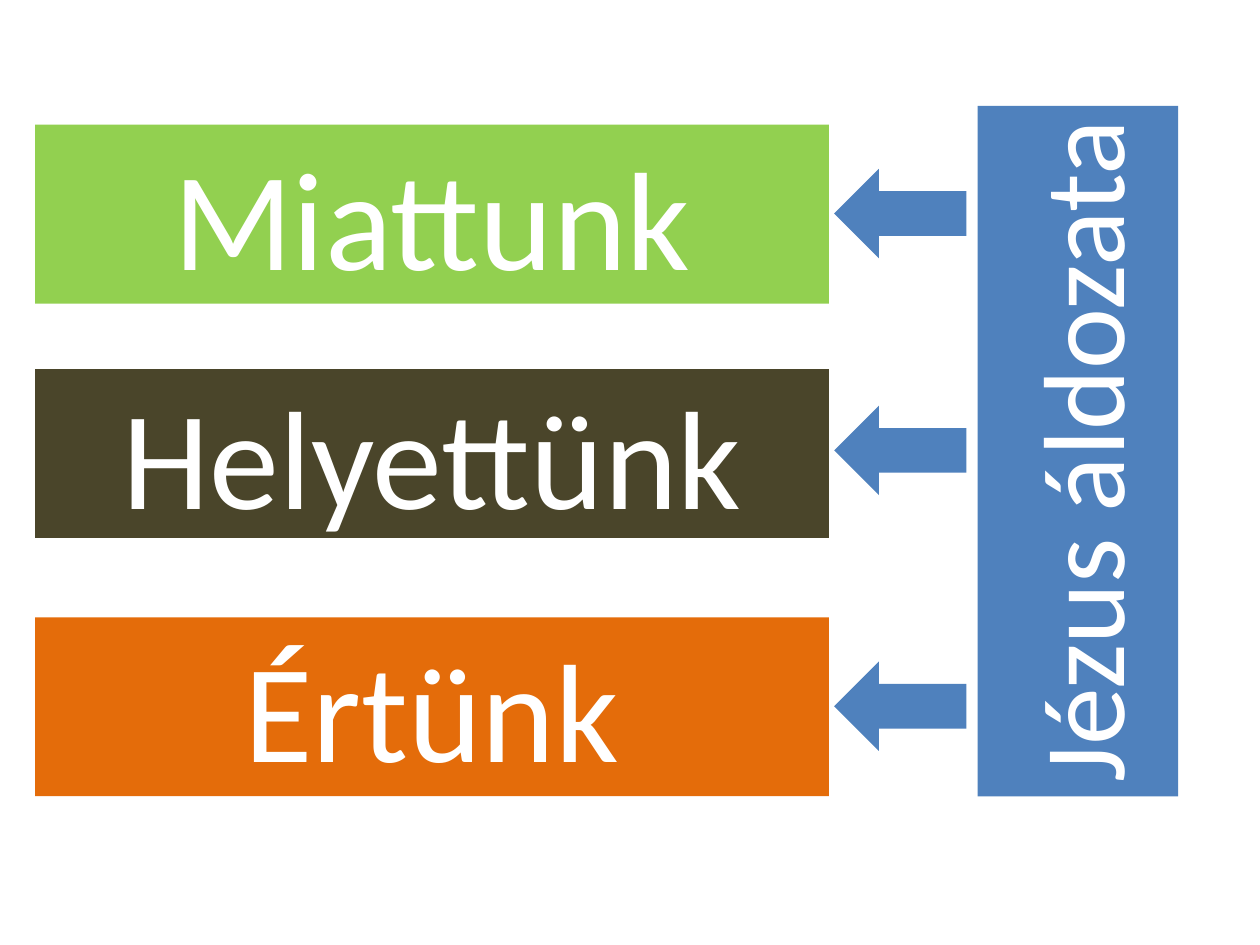
from dataclasses import dataclass

from pptx import Presentation
from pptx import util as u
from pptx.dml.color import RGBColor
from pptx.enum import shapes, text

COLORS = {
    "green": "92D050",
    "brown": "4A452A",
    "orange": "E46C0A",
    "blue": "4F81BD",
    "white": "FFFFFF",
}
FONT = "Calibri"
SLIDE_WIDTH, SLIDE_HEIGHT = u.Inches(10), u.Inches(7.5)


@dataclass
class Area:
    """Place and size in percent of the slide's width and height."""
    left: float
    top: float
    width: float
    height: float


@dataclass
class Reason:
    label: str
    color: str
    top: float
    height: float
    arrow_top: float


REASONS = [
    Reason("Miattunk", "green", 13.2, 18.93, 17.87),
    Reason("Helyettünk", "brown", 39.07, 17.87, 42.93),
    Reason("Értünk", "orange", 65.33, 18.93, 70),
]
REASON_LEFT, REASON_WIDTH = 2.8, 63
ARROW_LEFT, ARROW_WIDTH, ARROW_HEIGHT = 66.2, 10.5, 9.47
SACRIFICE = Area(77.6, 11.2, 15.9, 73.07)


def add_block(page, kind: shapes.MSO_SHAPE, area: Area, color: str):
    block = page.shapes.add_shape(
        kind,
        u.Emu(round(SLIDE_WIDTH * area.left / 100)),
        u.Emu(round(SLIDE_HEIGHT * area.top / 100)),
        u.Emu(round(SLIDE_WIDTH * area.width / 100)),
        u.Emu(round(SLIDE_HEIGHT * area.height / 100)),
    )
    block.shadow.inherit = False
    block.fill.solid()
    block.fill.fore_color.rgb = RGBColor.from_string(COLORS[color])
    block.line.fill.background()
    return block


def add_label_box(page, area: Area, color: str, label: str, size: int):
    box = add_block(page, shapes.MSO_SHAPE.RECTANGLE, area, color)
    frame = box.text_frame
    frame.word_wrap = True
    frame.vertical_anchor = text.MSO_ANCHOR.MIDDLE
    para = frame.paragraphs[0]
    para.alignment = text.PP_ALIGN.CENTER
    span = para.add_run()
    span.text = label
    span.font.name = FONT
    span.font.size = u.Pt(size)
    span.font.color.rgb = RGBColor.from_string(COLORS["white"])
    return box


def main() -> None:
    deck = Presentation()
    deck.slide_width, deck.slide_height = SLIDE_WIDTH, SLIDE_HEIGHT
    page = deck.slides.add_slide(deck.slide_layouts.get_by_name("Blank"))

    for reason in REASONS:
        area = Area(REASON_LEFT, reason.top, REASON_WIDTH, reason.height)
        add_label_box(page, area, reason.color, reason.label, 80)
        arrow = Area(ARROW_LEFT, reason.arrow_top, ARROW_WIDTH, ARROW_HEIGHT)
        add_block(page, shapes.MSO_SHAPE.LEFT_ARROW, arrow, "blue")

    pillar = add_label_box(page, SACRIFICE, "blue", "Jézus áldozata", 66)
    pillar.element.txBody.bodyPr.set("vert", "vert270")

    deck.save("out.pptx")


if __name__ == "__main__":
    main()
